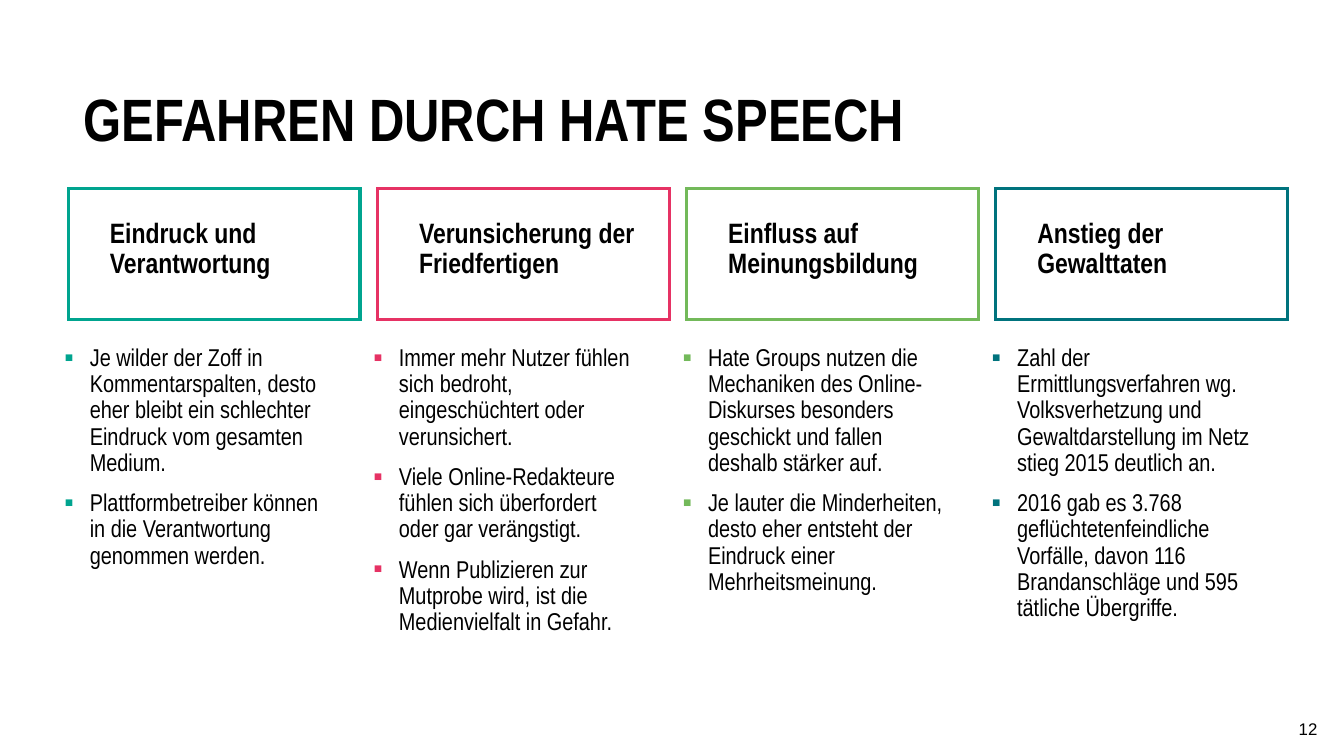
from lxml.etree import SubElement as Sub
from pptx import Presentation
from pptx.dml.color import RGBColor
from pptx.enum.shapes import MSO_SHAPE as Shape
from pptx.enum.text import MSO_ANCHOR as Anchor, PP_ALIGN as Align
from pptx.oxml.ns import qn
from pptx.util import Inches, Pt

UNIT = Inches(1)  # the slide is a grid of 10 columns with square cells
COLS = 10
ROWS = COLS * 9 / 16
PITCH = 2.3
NARROW = "Arial Narrow"

TOPICS = [
    ("00A48F", "Eindruck und Verantwortung", [
        "Je wilder der Zoff in Kommentarspalten, desto eher bleibt ein "
        "schlechter Eindruck vom gesamten Medium.",
        "Plattformbetreiber können in die Verantwortung genommen werden."]),
    ("E63264", "Verunsicherung der Friedfertigen", [
        "Immer mehr Nutzer fühlen sich bedroht, eingeschüchtert oder "
        "verunsichert.",
        "Viele Online-Redakteure fühlen sich überfordert oder gar verängstigt.",
        "Wenn Publizieren zur Mutprobe wird, ist die Medienvielfalt in Gefahr."]),
    ("73B95A", "Einfluss auf Meinungsbildung", [
        "Hate Groups nutzen die Mechaniken des Online-Diskurses besonders "
        "geschickt und fallen deshalb stärker auf.",
        "Je lauter die Minderheiten, desto eher entsteht der Eindruck einer "
        "Mehrheitsmeinung."]),
    ("00737D", "Anstieg der Gewalttaten", [
        "Zahl der Ermittlungsverfahren wg. Volksverhetzung und "
        "Gewaltdarstellung im Netz stieg 2015 deutlich an.",
        "2016 gab es 3.768 geflüchtetenfeindliche Vorfälle, davon 116 "
        "Brandanschläge und 595 tätliche Übergriffe."]),
]


def color(code):
    return RGBColor.from_string(code)


def cells(*spans):
    return [int(span * UNIT) for span in spans]


def indent(para, left, first, mark=None):
    """Set the indents in grid units and, given a colour, a square bullet."""
    props = para._p.get_or_add_pPr()
    props.set("marL", str(int(left * UNIT)))
    props.set("indent", str(int(first * UNIT)))
    if mark:
        Sub(Sub(props, qn("a:buClr")), qn("a:srgbClr"), val=mark)
        Sub(props, qn("a:buSzPct"), val="110000")
        Sub(props, qn("a:buFont"), typeface="Arial")
        Sub(props, qn("a:buChar"), char="▪")


def write(shape, *texts, size=13, font=NARROW, bold=False, align=Align.LEFT,
          anchor=Anchor.TOP, line=0.9, left=0, first=0, mark=None):
    frame = shape.text_frame
    frame.word_wrap = True
    frame.vertical_anchor = anchor
    for i, text in enumerate(texts):
        para = frame.add_paragraph() if i else frame.paragraphs[0]
        indent(para, left, first, mark)
        para.alignment = align
        para.line_spacing = line
        para.space_before = Pt(7.5 if i else 0)
        run = para.add_run()
        run.text = text
        run.font.size, run.font.name, run.font.bold = Pt(size), font, bold
        run.font.color.rgb = color("000000")


def title(slide, x, y, w, h):
    head = slide.shapes.title
    head.left, head.top, head.width, head.height = cells(x, y, w, h)
    write(head, "GEFAHREN DURCH HATE SPEECH", size=32, bold=True, line=Pt(38.4))


def topic(slide, x, y, w, h, tone, name, points):
    """Draw a framed heading in the given box, with its points below."""
    frame = slide.shapes.add_shape(Shape.RECTANGLE, *cells(x, y, w, h))
    frame.shadow.inherit = False
    frame.fill.background()
    frame.line.color.rgb = color(tone)
    frame.line.width = Pt(1.75)
    Sub(frame.line._get_or_add_ln(), qn("a:miter"), lim="800000")
    label = slide.shapes.add_textbox(*cells(x + 0.01, y + 0.18, w - 0.03, h - 0.16))
    write(label, name, size=15, bold=True, left=0.2)
    body = slide.shapes.add_textbox(*cells(x - 0.14, y + h + 0.14, w - 0.02, 1.28))
    write(body, *points, left=0.2, first=-0.19, mark=tone)


def number(slide, x, y, w, h):
    box = slide.shapes.add_textbox(*cells(x, y, w, h))
    write(box, "12", size=9, font="Arial", align=Align.RIGHT,
          anchor=Anchor.MIDDLE, line=1)


def main():
    deck = Presentation()
    deck.slide_width, deck.slide_height = cells(COLS, ROWS)
    slide = deck.slides.add_slide(deck.slide_layouts[5])
    title(slide, 0.52, 0.56, 7.86, 0.59)
    for i, item in enumerate(TOPICS):
        topic(slide, 0.51 + i * PITCH, 1.4, 2.17, 0.98, *item)
    number(slide, 9.31, 5.27, 0.59, 0.3)
    deck.save("out.pptx")


if __name__ == "__main__":
    main()
